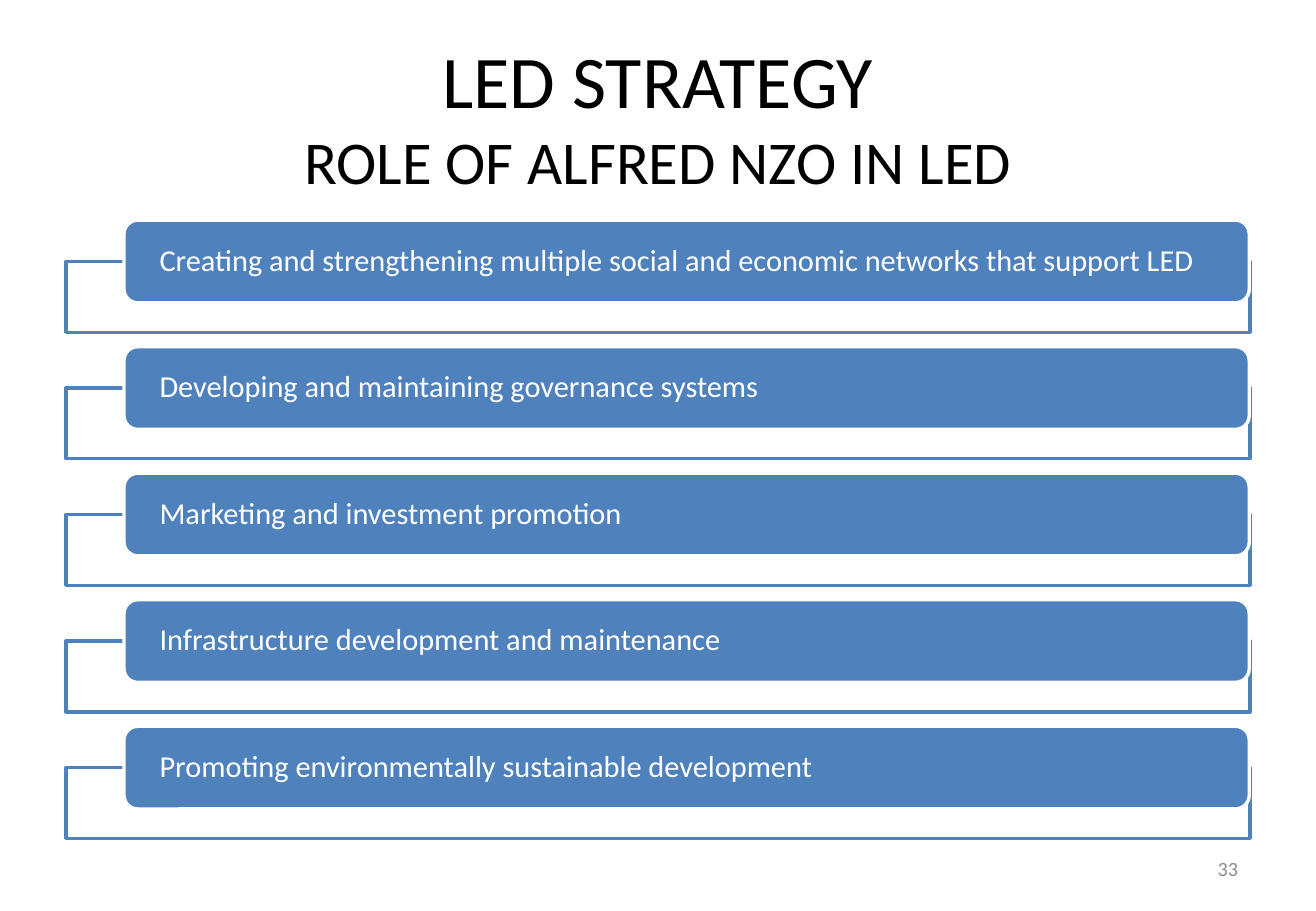
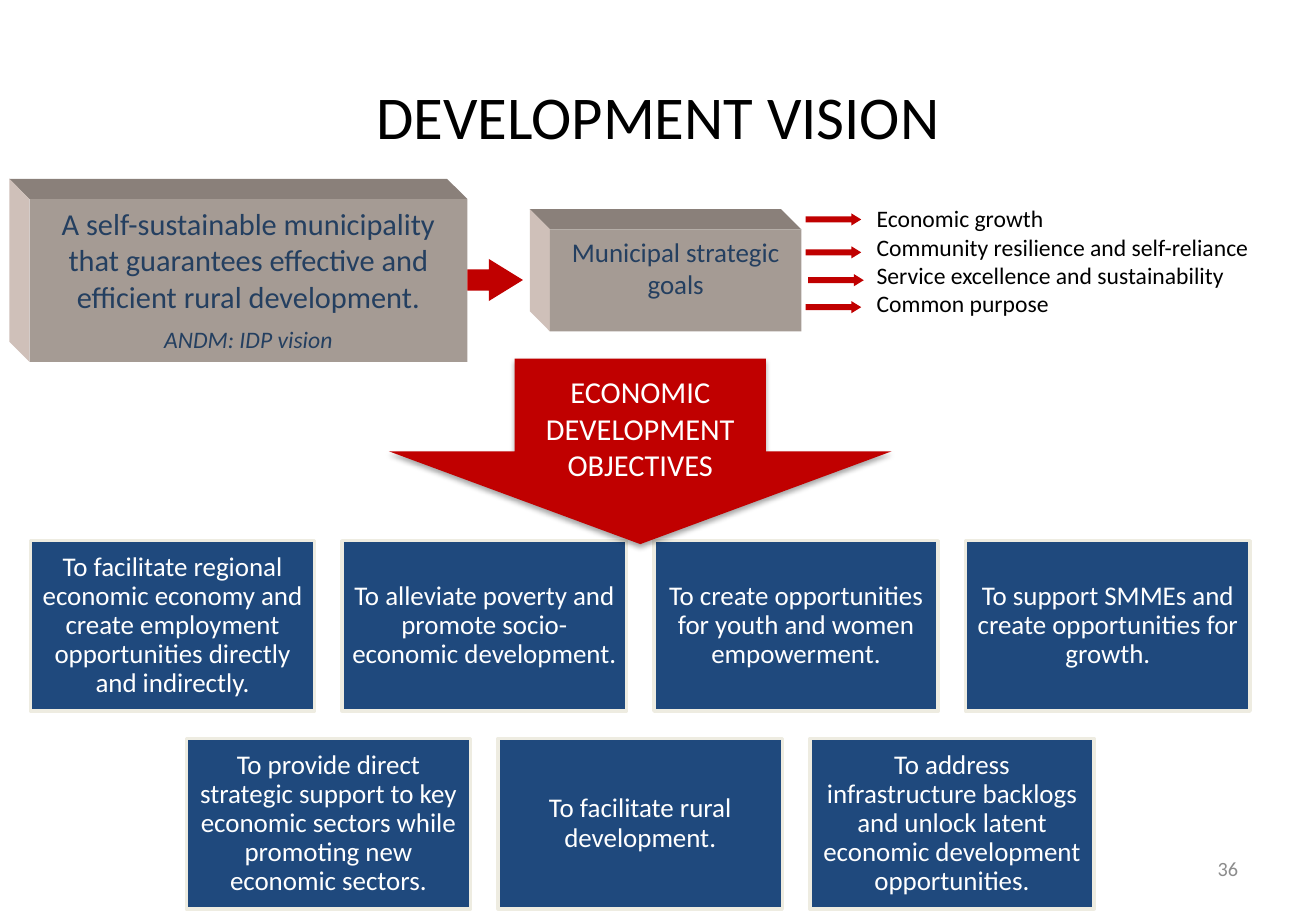
from pptx import Presentation
from pptx.dml.color import RGBColor
from pptx.enum.shapes import MSO_SHAPE
from pptx.enum.text import MSO_ANCHOR, PP_ALIGN
from pptx.oxml import parse_xml
from pptx.oxml.ns import nsdecls, qn
from pptx.util import Pt

WHITE = RGBColor(0xFF, 0xFF, 0xFF)
BLACK = RGBColor(0x00, 0x00, 0x00)
GREY = RGBColor(0x8C, 0x8C, 0x8C)
BLUE = RGBColor(0x4F, 0x81, 0xBD)
NAVY = RGBColor(0x1F, 0x49, 0x7D)
INK = RGBColor(0x24, 0x3F, 0x60)
CREAM = RGBColor(0xEE, 0xEC, 0xE1)
RED = RGBColor(0xC0, 0x00, 0x00)
FRONT = RGBColor(0xA5, 0x9B, 0x94)
TOP = RGBColor(0x8A, 0x80, 0x7A)
SIDE = RGBColor(0xCF, 0xC0, 0xB9)

FONT = "Calibri"
LEFT, WIDE = 39, 702
DEPTH = 12
INSET = (7.2, 3.6, 7.2, 3.6)


class Deck:
    def __init__(self):
        self.prs = Presentation()
        self.prs.slide_width, self.prs.slide_height = Pt(780), Pt(540)
        self.slide = None

    def page(self, lines, number):
        """Start a slide with its title lines (text, size) and number."""
        self.slide = self.prs.slides.add_slide(self.prs.slide_layouts[5])
        title = self.slide.shapes.title
        title.left, title.top = Pt(LEFT), Pt(21.6)
        title.width, title.height = Pt(WIDE), Pt(90)
        self.frame(title, MSO_ANCHOR.MIDDLE, (7.2, 7.2, 7.2, 3.6))
        para = title.text_frame.paragraphs[0]
        para.alignment = PP_ALIGN.CENTER
        for i, (text, size) in enumerate(lines):
            if i:
                para.add_line_break()
            self.run(para, text, size, BLACK)
        foot = self.slide.shapes.add_textbox(
            Pt(558.5), Pt(500.5), Pt(182.5), Pt(28.75))
        self.frame(foot, MSO_ANCHOR.MIDDLE)
        self.para(foot, number, 12, GREY, PP_ALIGN.RIGHT)

    def frame(self, shape, anchor, inset=INSET):
        box = shape.text_frame
        box.word_wrap = True
        box.vertical_anchor = anchor
        (box.margin_left, box.margin_top,
         box.margin_right, box.margin_bottom) = map(Pt, inset)

    def run(self, para, text, size, color, slant=False):
        run = para.add_run()
        run.text = text
        font = run.font
        font.name, font.size = FONT, Pt(size)
        font.bold, font.italic = False, slant
        font.color.rgb = color

    def para(self, shape, text, size, color, align=PP_ALIGN.CENTER,
             after=0, space=None, slant=False):
        """Write into the empty first paragraph, or else add one."""
        box = shape.text_frame
        para = box.paragraphs[0]
        if para.runs:
            para = box.add_paragraph()
        para.alignment = align
        para.space_after = Pt(after)
        if space:
            para.line_spacing = space
        self.run(para, text, size, color, slant)

    def paint(self, shape, fill, line=None):
        shape.shadow.inherit = False
        shape.fill.solid()
        shape.fill.fore_color.rgb = fill
        if line:
            shape.line.color.rgb = line
            shape.line.width = Pt(2)
        else:
            shape.line.fill.background()
        return shape

    def shape(self, kind, x, y, w, h, fill, line=None):
        shape = self.slide.shapes.add_shape(kind, Pt(x), Pt(y), Pt(w), Pt(h))
        return self.paint(shape, fill, line)

    def face(self, points, fill):
        start, *rest = [(Pt(x), Pt(y)) for x, y in points]
        form = self.slide.shapes.build_freeform(*start)
        form.add_line_segments(rest)
        self.paint(form.convert_to_shape(), fill)

    def block(self, x, y, w, h):
        """Box with a top and a left face behind its front."""
        d = DEPTH
        back = (x - d, y - d)
        self.face([back, (x + w - d, y - d), (x + w, y), (x, y)], TOP)
        self.face([back, (x, y), (x, y + h), (x - d, y + h - d)], SIDE)
        front = self.shape(MSO_SHAPE.RECTANGLE, x, y, w, h, FRONT)
        self.frame(front, MSO_ANCHOR.TOP)
        return front

    def arrow(self, x, y, w, h):
        arrow = self.shape(MSO_SHAPE.RIGHT_ARROW, x, y, w, h, RED)
        arrow.adjustments[0], arrow.adjustments[1] = 0.5, 0.81

    def bar(self, y, text):
        """Rounded bar over an outlined frame."""
        self.shape(MSO_SHAPE.RECTANGLE, LEFT, y + 24.5, WIDE, 42, WHITE, BLUE)
        bar = self.shape(MSO_SHAPE.ROUNDED_RECTANGLE,
                         73.5, y, 667, 49, BLUE, WHITE)
        self.frame(bar, MSO_ANCHOR.MIDDLE, (18.7, 0, 18.7, 0))
        self.para(bar, text, 18, WHITE, PP_ALIGN.LEFT, space=0.9)

    def card(self, x, y, w, h, text):
        card = self.shape(MSO_SHAPE.RECTANGLE, x, y, w, h, NAVY, CREAM)
        self.frame(card, MSO_ANCHOR.MIDDLE, (5, 5, 5, 5))
        self.para(card, text, 16, WHITE, space=0.9)

    def shade(self, shape):
        shape._element.spPr.find(qn("a:effectLst")).append(parse_xml(
            f'<a:outerShdw {nsdecls("a")} blurRad="{Pt(3.1)}" '
            f'dist="{Pt(1.8)}" dir="5400000" rotWithShape="0">'
            '<a:srgbClr val="000000"><a:alpha val="35000"/></a:srgbClr>'
            '</a:outerShdw>'))


ROLES = [
    "Creating and strengthening multiple social and economic networks "
    "that support LED",
    "Developing and maintaining governance systems",
    "Marketing and investment promotion",
    "Infrastructure development and maintenance",
    "Promoting environmentally sustainable development",
]
GOALS = [
    "Economic growth",
    "Community resilience and self-reliance",
    "Service excellence and sustainability",
    "Common purpose",
]
AIMS = [
    ["To facilitate regional economic economy and create employment "
     "opportunities directly and indirectly.",
     "To alleviate poverty and promote socio-economic development.",
     "To create opportunities for youth and women empowerment.",
     "To support SMMEs and create opportunities for growth."],
    ["To provide direct strategic support to key economic sectors while "
     "promoting new economic sectors.",
     "To facilitate rural development.",
     "To address infrastructure backlogs and unlock latent economic "
     "development opportunities."],
]


def roles(deck):
    deck.page([("LED STRATEGY", 44), ("ROLE OF ALFRED NZO IN LED", 36)], "33")
    for i, text in enumerate(ROLES):
        deck.bar(130.5 + 75 * i, text)


def vision(deck):
    deck.page([("DEVELOPMENT VISION", 36)], "36")

    # Strategic goals and their list
    goal = deck.block(326, 136, 149, 60.5)
    deck.para(goal, "Municipal strategic goals", 16, INK, after=6)
    names = deck.shape(MSO_SHAPE.RECTANGLE, 512.5, 117.5, 257, 97, WHITE)
    deck.frame(names, MSO_ANCHOR.TOP)
    for text in GOALS:
        deck.para(names, text, 14, BLACK, PP_ALIGN.LEFT)
    for x, y in [(477.5, 126.5), (477.5, 146), (479, 162.5), (477.5, 178.5)]:
        deck.arrow(x, y, 33, 7.2)

    # Vision statement
    block = deck.block(17.5, 118, 259.5, 96.5)
    deck.para(block, "A self-sustainable municipality that guarantees "
              "effective and efficient rural development.", 18, INK, after=6)
    deck.para(block, "ANDM: IDP vision", 14, INK, after=6, slant=True)

    # Objective cards, each row centred on the same axis
    w, h, gap, mid = 168.5, 101, 16.3, 379.5
    for r, row in enumerate(AIMS):
        left = mid - (len(row) * (w + gap) - gap) / 2
        for c, text in enumerate(row):
            deck.card(left + c * (w + gap), 320.5 + r * (h + gap), w, h, text)

    # Arrows that lead on
    down = deck.shape(MSO_SHAPE.DOWN_ARROW, 230.5, 212.5, 298, 110, RED)
    deck.shade(down)
    deck.frame(down, MSO_ANCHOR.MIDDLE)
    deck.para(down, "ECONOMIC DEVELOPMENT OBJECTIVES", 18, WHITE)
    deck.arrow(277, 153.5, 33, 25)


def main():
    deck = Deck()
    roles(deck)
    vision(deck)
    deck.prs.save("out.pptx")


if __name__ == "__main__":
    main()
